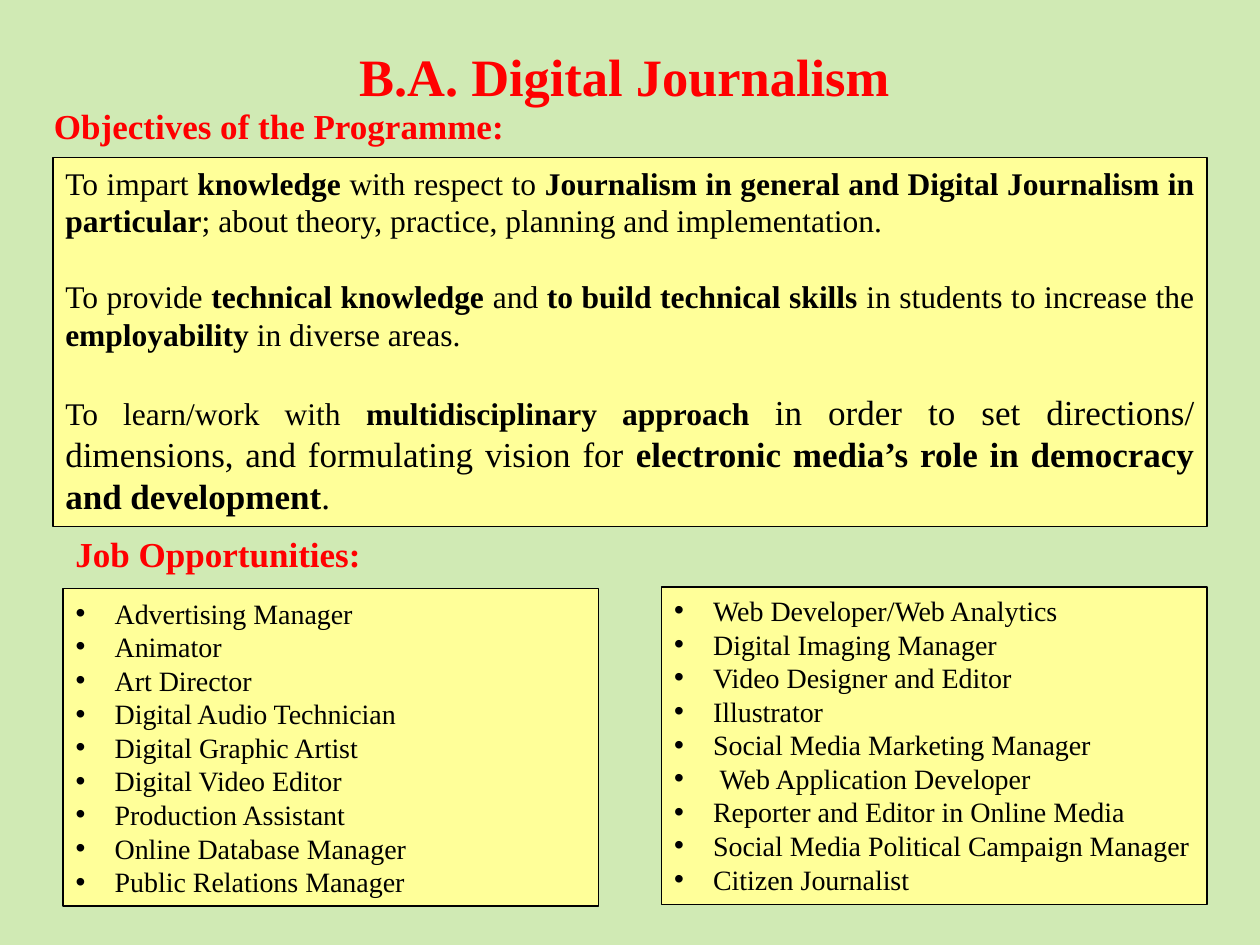
from pptx import Presentation, util as u
from pptx.dml.color import RGBColor
from pptx.enum import shapes, text

RED = RGBColor(0xFF, 0x00, 0x00)
BLACK = RGBColor(0x00, 0x00, 0x00)
YELLOW = RGBColor(0xFF, 0xFF, 0x99)
GREEN = RGBColor(0xD0, 0xEA, 0xB4)
FONT = "Times New Roman"
LEFT, RIGHT = 0.42, 9.58
INDENT = 0.31
JUSTIFY = text.PP_ALIGN.JUSTIFY

# Each objective is a list of (words, bold, size).
OBJECTIVES = [
    [("To impart", False, 18), (" knowledge ", True, 18), ("with respect to ", False, 18),
     ("Journalism in general and Digital Journalism in particular", True, 18),
     ("; about theory, practice, planning and implementation.", False, 18)],
    [("To provide ", False, 18), ("technical knowledge ", True, 18), ("and ", False, 18),
     ("to build technical skills", True, 18), (" in students to increase the ", False, 18),
     ("employability", True, 18), (" in diverse areas.", False, 18)],
    [("To learn/work with ", False, 18), ("multidisciplinary approach ", True, 18),
     ("in order to set directions/ dimensions, and formulating vision for", False, 20),
     (" electronic media’s role in democracy and development", True, 20), (".", False, 20)],
]
MEDIA_JOBS = [
    "Advertising Manager", "Animator", "Art Director", "Digital Audio Technician",
    "Digital Graphic Artist", "Digital Video Editor", "Production Assistant",
    "Online Database Manager", "Public Relations Manager",
]
ONLINE_JOBS = [
    "Web Developer/Web Analytics", "Digital Imaging Manager", "Video Designer and Editor",
    "Illustrator", "Social Media Marketing Manager", " Web Application Developer",
    "Reporter and Editor in Online Media", "Social Media Political Campaign Manager",
    "Citizen Journalist",
]


def place(box, left, top, width, height):
    box.left, box.top, box.width, box.height = map(u.Inches, (left, top, width, height))


def add_words(paragraph, words, size=18, bold=False, color=BLACK):
    run = paragraph.add_run()
    run.text = words
    run.font.name, run.font.size, run.font.bold = FONT, u.Pt(size), bold
    run.font.color.rgb = color


def next_paragraph(frame, index):
    return frame.add_paragraph() if index else frame.paragraphs[0]


def prepare_frame(box, anchor=text.MSO_ANCHOR.TOP, wrap=True):
    frame = box.text_frame
    frame.auto_size = text.MSO_AUTO_SIZE.NONE
    frame.word_wrap = wrap
    frame.vertical_anchor = anchor
    return frame


def paint_panel(box):
    box.fill.solid()
    box.fill.fore_color.rgb = YELLOW
    box.line.color.rgb = BLACK
    box.line.width = u.Pt(0.75)


def write_title(title, words):
    place(title, 2.75, 0.25, 5.33, 0.75)
    frame = prepare_frame(title)
    frame.margin_top = u.Inches(0.1)
    frame.paragraphs[0].alignment = text.PP_ALIGN.LEFT
    add_words(frame.paragraphs[0], words, size=30, bold=True, color=RED)


def add_heading(slide, words, left, top, width):
    heading = slide.shapes.add_textbox(0, 0, 0, 0)
    place(heading, left, top, width, 0.44)
    frame = prepare_frame(heading, wrap=False)
    add_words(frame.paragraphs[0], words, size=20, bold=True, color=RED)


def add_objectives(slide):
    panel = slide.shapes.add_shape(shapes.MSO_SHAPE.RECTANGLE, 0, 0, 0, 0)
    place(panel, LEFT, 1.25, RIGHT - LEFT, 2.93)
    panel.shadow.inherit = False
    paint_panel(panel)
    frame = prepare_frame(panel)
    for index, objective in enumerate(OBJECTIVES):
        paragraph = next_paragraph(frame, index)
        paragraph.alignment = JUSTIFY
        if index:
            paragraph.space_before = u.Pt(21.6)
        for words, bold, size in objective:
            add_words(paragraph, words, size=size, bold=bold)


def write_jobs(body, jobs, left, top, right, anchor):
    """Fill a body placeholder, whose bullets come from the template."""
    place(body, left, top, right - left, 2.52)
    paint_panel(body)
    frame = prepare_frame(body, anchor)
    for index, job in enumerate(jobs):
        paragraph = next_paragraph(frame, index)
        paragraph.alignment = JUSTIFY
        paragraph.space_before = u.Pt(0)
        properties = paragraph._p.get_or_add_pPr()
        properties.set("marL", str(u.Inches(INDENT)))
        properties.set("indent", str(-u.Inches(INDENT)))
        add_words(paragraph, job, size=16)


def main():
    deck = Presentation()
    deck.slide_width, deck.slide_height = u.Inches(10), u.Inches(7.5)
    slide = deck.slides.add_slide(deck.slide_layouts.get_by_name("Two Content"))
    slide.background.fill.solid()
    slide.background.fill.fore_color.rgb = GREEN
    title, media, online, *unused = slide.placeholders
    for placeholder in unused:
        placeholder.element.getparent().remove(placeholder.element)

    write_title(title, "B.A. Digital Journalism")
    add_heading(slide, "Objectives of the Programme:", 0.33, 0.78, 3.87)
    add_objectives(slide)
    add_heading(slide, "Job Opportunities:", 0.5, 4.18, 2.55)
    write_jobs(media, MEDIA_JOBS, 0.5, 4.67, 4.75, text.MSO_ANCHOR.MIDDLE)
    write_jobs(online, ONLINE_JOBS, 5.25, 4.66, RIGHT, text.MSO_ANCHOR.TOP)
    deck.save("out.pptx")


if __name__ == "__main__":
    main()
